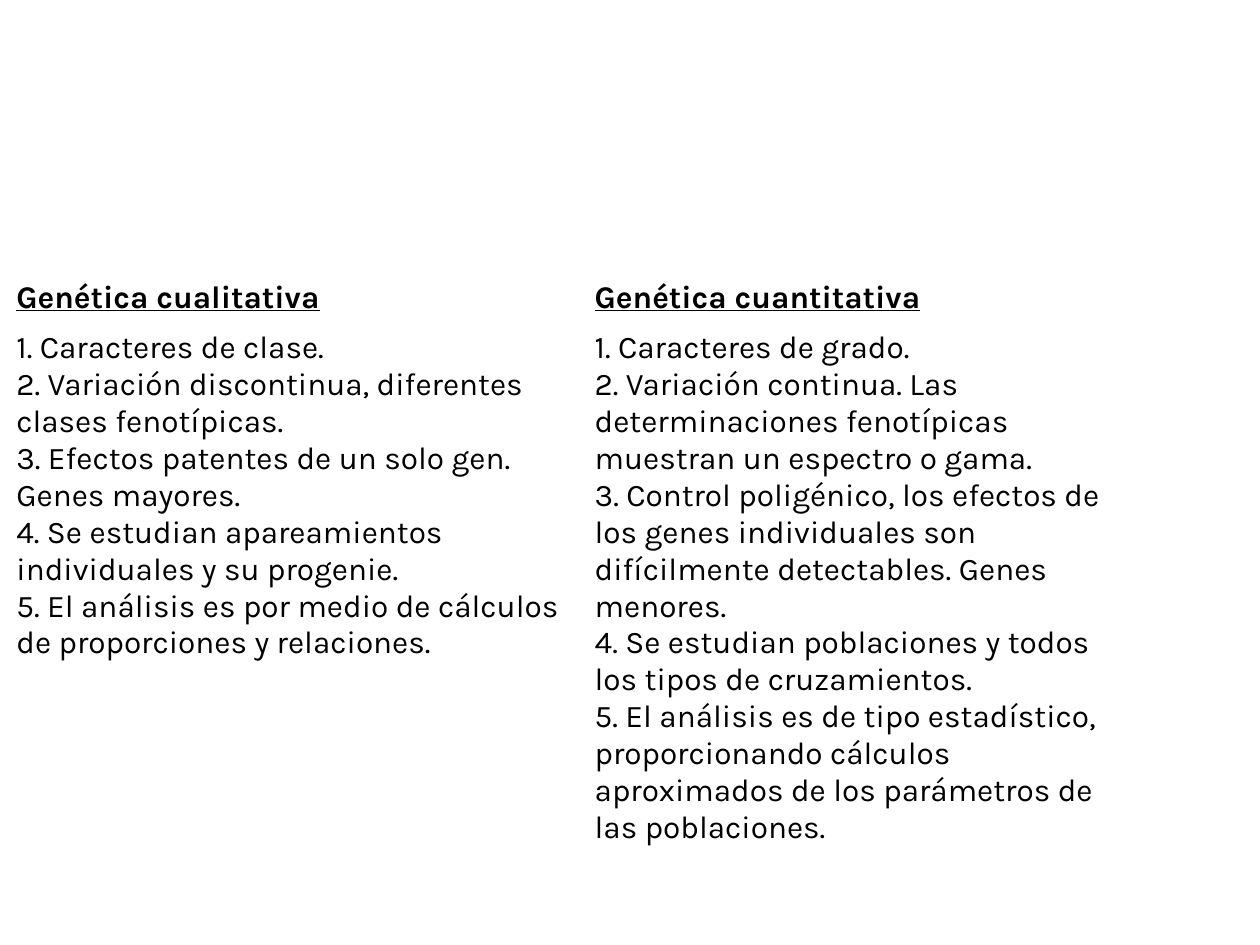
from pptx import Presentation
from pptx.dml.color import RGBColor
from pptx.oxml.ns import qn
from pptx.util import Inches, Pt
from lxml.etree import SubElement

BLACK = RGBColor(0, 0, 0)
BASE = {"name": "Karla", "size": Pt(18), "bold": False, "underline": False}
HEADING = {**BASE, "bold": True, "underline": True}
COL_WIDTHS = (4.59, 4.41)
ROW_HEIGHTS = (0.39, 4.31)

COLUMNS = {
    "Genética cualitativa": [
        "Caracteres de clase.",
        "Variación discontinua, diferentes clases fenotípicas.",
        "Efectos patentes de un solo gen. Genes mayores.",
        "Se estudian apareamientos individuales y su progenie.",
        "El análisis es por medio de cálculos de proporciones y relaciones.",
    ],
    "Genética cuantitativa": [
        "Caracteres de grado.",
        "Variación continua. Las determinaciones fenotípicas muestran un espectro o gama.",
        "Control poligénico, los efectos de los genes individuales son "
        "difícilmente detectables. Genes menores.",
        "Se estudian poblaciones y todos los tipos de cruzamientos.",
        "El análisis es de tipo estadístico, proporcionando cálculos "
        "aproximados de los parámetros de las poblaciones.",
    ],
}


def add_text(p, text, style):
    """Add a run of text with the given font values."""
    r = p.add_run()
    r.text = text
    for name, value in style.items():
        setattr(r.font, name, value)
    r.font.color.rgb = BLACK


def number(p):
    """Number a paragraph automatically, flush with the cell margin."""
    pPr = p._p.get_or_add_pPr()
    pPr.set("marL", "0")
    pPr.set("indent", "0")
    SubElement(pPr, qn("a:buFont")).set("typeface", "Karla")
    SubElement(pPr, qn("a:buAutoNum")).set("type", "arabicPeriod")


def fill_list(cell, items):
    """Write the items as a numbered list in a cell."""
    tf = cell.text_frame
    for i, item in enumerate(items):
        p = tf.add_paragraph() if i else tf.paragraphs[0]
        number(p)
        add_text(p, f" {item}", BASE)


def add_comparison(s, left, top, width, height):
    """Place the two-column comparison table in the given box."""
    table = s.shapes.add_table(2, len(COLUMNS), left, top, width, height).table
    table.first_row = table.horz_banding = False
    for col, w in zip(table.columns, COL_WIDTHS):
        col.width = Inches(w)
    for row, h in zip(table.rows, ROW_HEIGHTS):
        row.height = Inches(h)
    for cell in table.iter_cells():
        cell.fill.background()
    for i, (heading, items) in enumerate(COLUMNS.items()):
        add_text(table.cell(0, i).text_frame.paragraphs[0], heading, HEADING)
        fill_list(table.cell(1, i), items)


def main():
    """Build and save the slide."""
    prs = Presentation()
    prs.slide_width, prs.slide_height = Inches(10), Inches(7.5)
    s = prs.slides.add_slide(prs.slide_layouts[6])
    add_comparison(s, Inches(0.03), Inches(2.17), Inches(9), Inches(4.7))
    prs.save("out.pptx")


if __name__ == "__main__":
    main()
